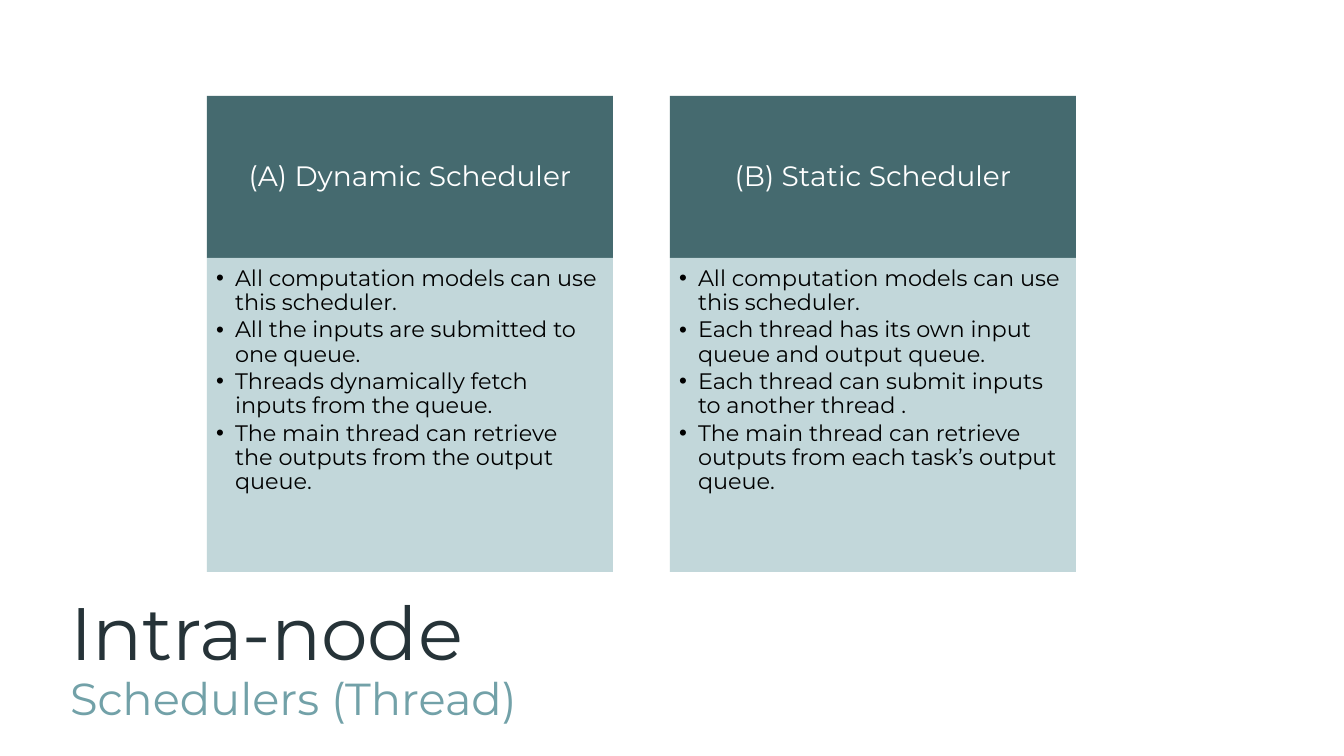
from lxml.etree import SubElement
from pptx import Presentation
from pptx.dml.color import RGBColor
from pptx.enum.shapes import MSO_SHAPE as Shape
from pptx.enum.text import MSO_ANCHOR as Anchor, PP_ALIGN as Align
from pptx.oxml.ns import qn
from pptx.util import Pt

PX = 914400 / 100.8
INDENT = 19
COLUMN_LEFT, COLUMN_STEP, COLUMN_WIDTH = 207, 463, 406
HEADER_TOP, HEADER_HEIGHT, BODY_HEIGHT = 96, 162, 314

COLUMNS = [
    ("(A) Dynamic Scheduler", [
        "All computation models can use this scheduler.",
        "All the inputs are submitted to one queue.",
        "Threads dynamically fetch inputs from the queue.",
        "The main thread can retrieve the outputs from the output queue.",
    ]),
    ("(B) Static Scheduler", [
        "All computation models can use this scheduler.",
        "Each thread has its own input queue and output queue.",
        "Each thread can submit inputs to another thread .",
        "The main thread can retrieve outputs from each task’s output queue.",
    ]),
]


def px(length):
    return round(length * PX)


def write(box, lines, sizes, colors, insets, anchor=Anchor.TOP,
          align=Align.LEFT, after=0, bullet=None):
    frame = box.text_frame
    frame.word_wrap = True
    frame.vertical_anchor = anchor
    (frame.margin_left, frame.margin_top,
     frame.margin_right, frame.margin_bottom) = map(px, insets)
    for index, (line, size, color) in enumerate(zip(lines, sizes, colors)):
        para = frame.add_paragraph() if index else frame.paragraphs[0]
        para.alignment = align
        para.line_spacing = 0.9
        para.space_after = Pt(after)
        span = para.add_run()
        span.text = line
        span.font.name = "Montserrat"
        span.font.size = Pt(size)
        span.font.color.rgb = RGBColor.from_string(color)
        if bullet:
            properties = para._p.get_or_add_pPr()
            properties.set("marL", str(px(INDENT)))
            properties.set("indent", str(-px(INDENT)))
            SubElement(properties, qn("a:buFont"), typeface="Arial")
            SubElement(properties, qn("a:buChar"), char=bullet)


deck = Presentation()
deck.slide_width, deck.slide_height = px(1344), px(756)
page = deck.slides.add_slide(deck.slide_layouts[6])

# Scheduler columns: a header above a list
for column, (heading, points) in enumerate(COLUMNS):
    left = COLUMN_LEFT + column * COLUMN_STEP
    panels = []
    for top, height, color in [
        (HEADER_TOP, HEADER_HEIGHT, "456A6F"),
        (HEADER_TOP + HEADER_HEIGHT, BODY_HEIGHT, "BCD3D6"),
    ]:
        panel = page.shapes.add_shape(
            Shape.RECTANGLE, px(left), px(top), px(COLUMN_WIDTH), px(height))
        panel.shadow.inherit = False
        panel.fill.solid()
        panel.fill.fore_color.rgb = RGBColor.from_string(color)
        panel.line.fill.background()
        panels.append(panel)
    header, body = panels

    write(header, [heading], [20], ["FFFFFF"], (16, 9, 16, 9),
          anchor=Anchor.MIDDLE, align=Align.CENTER)

    # The list panel is slightly see-through
    body_color = body.fill._xPr.find(qn("a:solidFill"))[0]
    SubElement(body_color, qn("a:alpha"), val="90000")
    write(body, points, [16] * len(points), ["000000"] * len(points),
          (9, 9, 12, 14), after=2.4, bullet="•")

# Title and subtitle
title = page.shapes.add_textbox(px(60), px(588), px(1159), px(146))
write(title, ["Intra-node", "Schedulers (Thread)"], [53, 32],
      ["263338", "72A1A8"], (10, 5, 10, 5), anchor=Anchor.MIDDLE)

deck.save("out.pptx")
